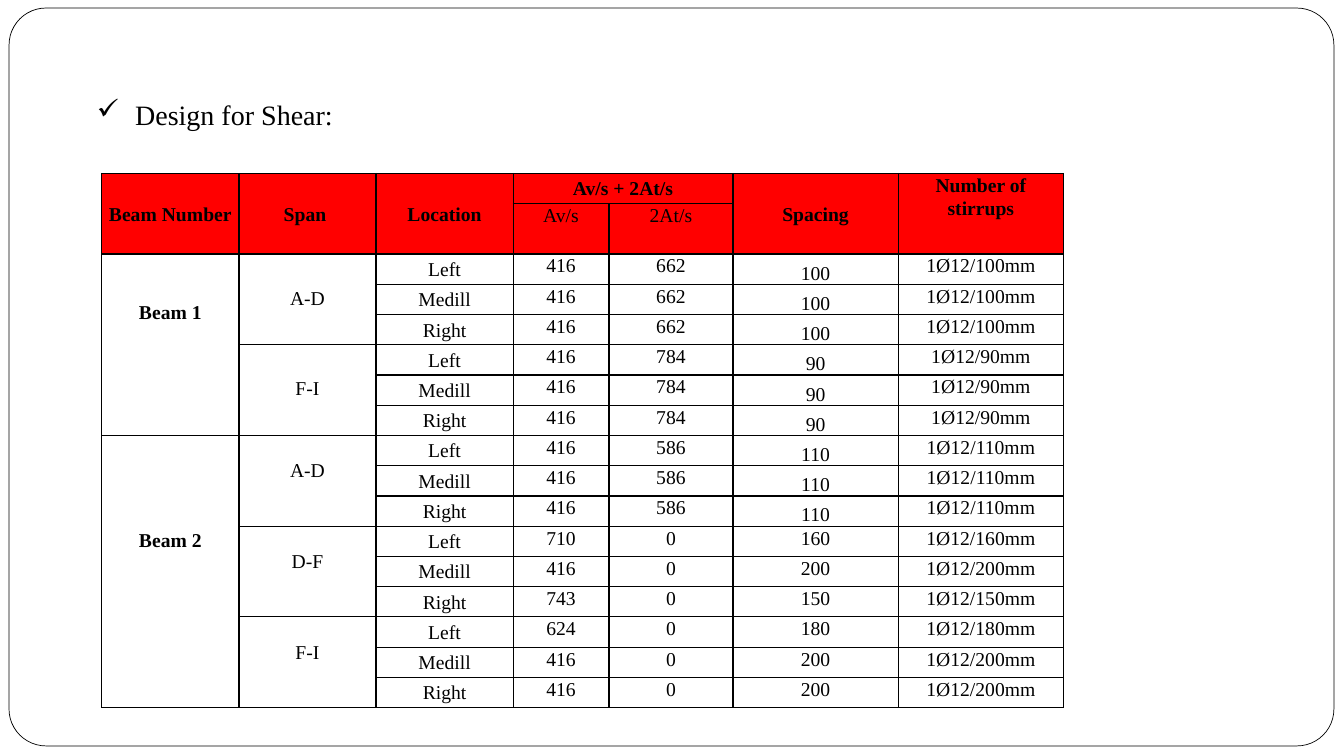
from dataclasses import dataclass

from lxml import etree
from pptx import Presentation
from pptx import table as tb
from pptx import util as u
from pptx.dml import color as dml
from pptx.enum import shapes, text
from pptx.oxml import ns
from pptx.slide import Slide

COLORS = {"black": "000000", "white": "FFFFFF", "header": "FF0000"}
FONT = "Times New Roman"
TOP, MIDDLE, BOTTOM = (text.MSO_ANCHOR.TOP, text.MSO_ANCHOR.MIDDLE,
                       text.MSO_ANCHOR.BOTTOM)
COLUMN_WIDTHS = [1.36, 1.36, 1.36, 0.95, 1.23, 1.64, 1.64]
HEADER_HEIGHTS = [0.3, 0.5]
ROW_HEIGHT = 0.3
LOCATIONS = ["Left", "Medill", "Right"]


@dataclass
class Span:
    name: str
    gap: float  # space above the label
    shear: list[int]  # Av/s at each location
    torsion: int  # 2At/s
    spacing: list[int]


@dataclass
class Beam:
    name: str
    gap: float
    spans: list[Span]


@dataclass
class Header:
    label: str
    row: int
    column: int
    rows: int = 1
    columns: int = 1
    anchor: text.MSO_ANCHOR = MIDDLE
    bold: bool = True


HEADERS = [
    Header("Beam Number", 0, 0, rows=2),
    Header("Span ", 0, 1, rows=2),
    Header("Location", 0, 2, rows=2),
    Header("Av/s + 2At/s", 0, 3, columns=2),
    Header("Av/s", 1, 3, anchor=TOP, bold=False),
    Header("2At/s", 1, 4, anchor=TOP, bold=False),
    Header("Spacing", 0, 5, rows=2),
    Header("Number of stirrups", 0, 6, rows=2, anchor=TOP),
]
BEAMS = [
    Beam("Beam 1", 0.46, [
        Span("A-D", 0.32, [416, 416, 416], 662, [100, 100, 100]),
        Span("F-I", 0.32, [416, 416, 416], 784, [90, 90, 90]),
    ]),
    Beam("Beam 2", 0.92, [
        Span("A-D", 0.23, [416, 416, 416], 586, [110, 110, 110]),
        Span("D-F", 0.23, [710, 416, 743], 0, [160, 200, 150]),
        Span("F-I", 0.23, [624, 416, 416], 0, [180, 200, 200]),
    ]),
]


def rgb(name: str) -> dml.RGBColor:
    return dml.RGBColor.from_string(COLORS[name])


def style_text(paragraph, size: int, bold: bool = False) -> None:
    for run in paragraph.runs:
        run.font.name = FONT
        run.font.size = u.Pt(size)
        run.font.bold = bold
        run.font.color.rgb = rgb("black")


def style_cell(cell: tb._Cell, fill: str, side_margin: float) -> None:
    """Set the fill, margins and black border of a cell."""
    cell.margin_left = cell.margin_right = u.Inches(side_margin)
    cell.margin_top = cell.margin_bottom = 0
    cell.fill.solid()
    cell.fill.fore_color.rgb = rgb(fill)
    properties = cell._tc.get_or_add_tcPr()
    for index, side in enumerate(["lnL", "lnR", "lnT", "lnB"]):
        line = etree.Element(ns.qn(f"a:{side}"), w=str(u.Pt(1)))
        solid = etree.SubElement(line, ns.qn("a:solidFill"))
        etree.SubElement(solid, ns.qn("a:srgbClr"), val=COLORS["black"])
        properties.insert(index, line)


def write_cell(cell: tb._Cell, label: str, anchor: text.MSO_ANCHOR = TOP,
               bold: bool = False, gap: float = 0) -> None:
    cell.text_frame.text = label
    cell.vertical_anchor = anchor
    cell.margin_top = u.Inches(gap)
    paragraph = cell.text_frame.paragraphs[0]
    paragraph.alignment = text.PP_ALIGN.CENTER
    paragraph.line_spacing = 1.07
    style_text(paragraph, 14, bold)


def add_frame(slide: Slide) -> None:
    frame = slide.shapes.add_shape(
        shapes.MSO_SHAPE.ROUNDED_RECTANGLE,
        u.Inches(0.09), u.Inches(0.08), u.Inches(13.14), u.Inches(7.32))
    frame.adjustments[0] = 0.05
    frame.shadow.inherit = False
    frame.fill.solid()
    frame.fill.fore_color.rgb = rgb("white")
    frame.line.color.rgb = rgb("black")
    frame.line.width = u.Pt(0.5)
    slide.shapes.title.element.addprevious(frame.element)


def write_title(slide: Slide) -> None:
    title = slide.shapes.title
    title.left, title.top = u.Inches(0.86), u.Inches(0.75)
    title.width, title.height = u.Inches(2.56), u.Inches(0.55)
    title.text_frame.text = "Design for Shear:"
    title.text_frame.word_wrap = False
    title.text_frame.auto_size = text.MSO_AUTO_SIZE.SHAPE_TO_FIT_TEXT
    title.text_frame.vertical_anchor = TOP
    paragraph = title.text_frame.paragraphs[0]
    paragraph.alignment = text.PP_ALIGN.LEFT
    paragraph.line_spacing = 1.5
    paragraph.space_after = u.Pt(6)
    style_text(paragraph, 20)
    properties = paragraph._p.get_or_add_pPr()
    properties.set("marL", str(u.Inches(0.38)))
    properties.set("indent", str(-u.Inches(0.38)))
    etree.SubElement(properties, ns.qn("a:buChar"), char="✓")


def add_shear_table(slide: Slide) -> None:
    span_count = sum(len(beam.spans) for beam in BEAMS)
    heights = HEADER_HEIGHTS + [ROW_HEIGHT] * span_count * len(LOCATIONS)
    table = slide.shapes.add_table(
        len(heights), len(COLUMN_WIDTHS), u.Inches(1.01), u.Inches(1.72),
        u.Inches(sum(COLUMN_WIDTHS)), u.Inches(sum(heights))).table
    for column, width in zip(table.columns, COLUMN_WIDTHS):
        column.width = u.Inches(width)
    for index, (row, height) in enumerate(zip(table.rows, heights)):
        row.height = u.Inches(height)
        is_header = index < len(HEADER_HEIGHTS)
        for cell in row.cells:
            style_cell(cell, "header" if is_header else "white",
                       0.06 if is_header else 0.07)

    # Header rows
    for header in HEADERS:
        cell = table.cell(header.row, header.column)
        if header.rows * header.columns > 1:
            cell.merge(table.cell(header.row + header.rows - 1,
                                  header.column + header.columns - 1))
        write_cell(cell, header.label, header.anchor, header.bold)

    # Beams, their spans and the locations on each span
    row = len(HEADER_HEIGHTS)
    for beam in BEAMS:
        beam_cell = table.cell(row, 0)
        beam_cell.merge(
            table.cell(row + len(beam.spans) * len(LOCATIONS) - 1, 0))
        write_cell(beam_cell, beam.name, bold=True, gap=beam.gap)
        for span in beam.spans:
            span_cell = table.cell(row, 1)
            span_cell.merge(table.cell(row + len(LOCATIONS) - 1, 1))
            write_cell(span_cell, span.name, gap=span.gap)
            spacing_anchor = BOTTOM if span.torsion else TOP
            for location, shear, spacing in zip(LOCATIONS, span.shear,
                                                span.spacing):
                write_cell(table.cell(row, 2), location, MIDDLE)
                write_cell(table.cell(row, 3), str(shear))
                write_cell(table.cell(row, 4), str(span.torsion))
                write_cell(table.cell(row, 5), str(spacing), spacing_anchor)
                write_cell(table.cell(row, 6), f"1Ø12/{spacing}mm")
                row += 1


def main() -> None:
    presentation = Presentation()
    presentation.slide_width = u.Inches(13.33)
    presentation.slide_height = u.Inches(7.5)
    slide = presentation.slides.add_slide(presentation.slide_layouts[5])
    add_frame(slide)
    write_title(slide)
    add_shear_table(slide)
    presentation.save("out.pptx")


if __name__ == "__main__":
    main()
